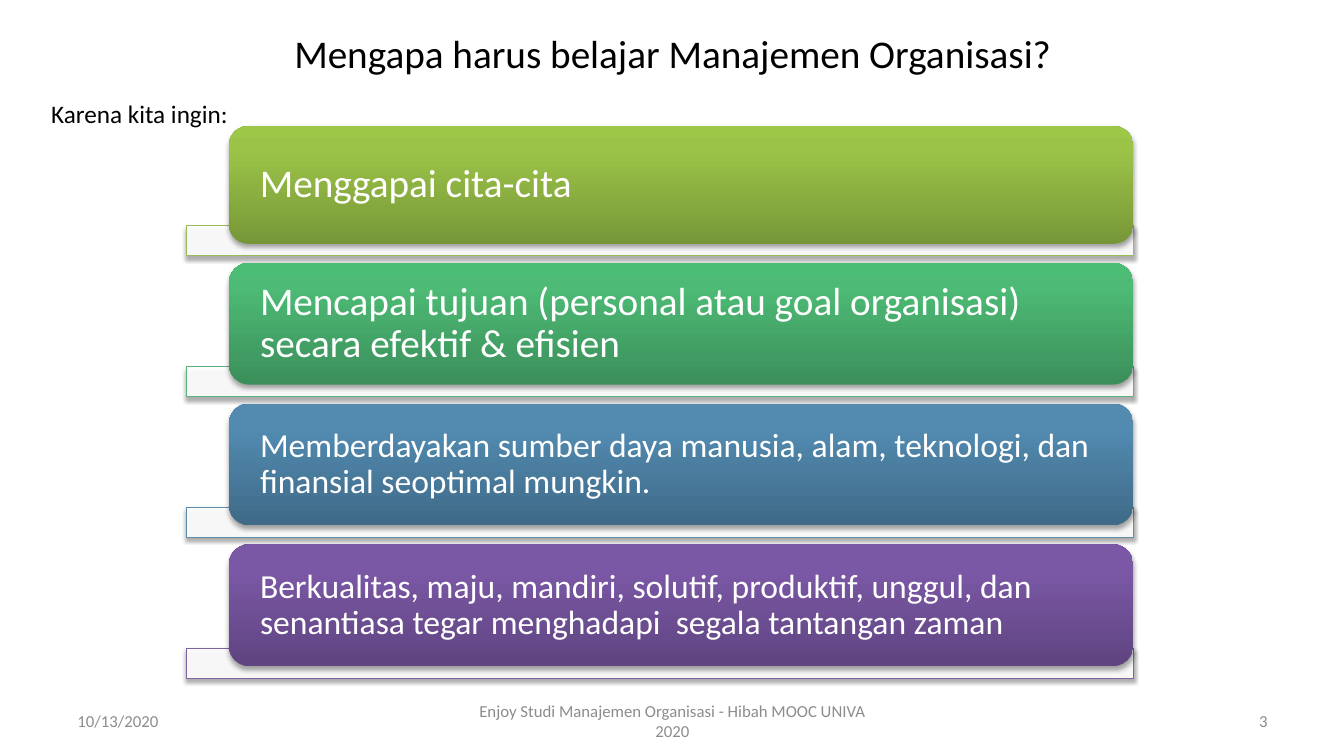
import copy

import pptx
import pptx.dml.color
import pptx.enum.shapes
import pptx.enum.text
import pptx.oxml
import pptx.oxml.ns
import pptx.util

Inches = pptx.util.Inches
Pt = pptx.util.Pt
SHAPE = pptx.enum.shapes.MSO_SHAPE
ALIGN = pptx.enum.text.PP_ALIGN
ANCHOR = pptx.enum.text.MSO_ANCHOR
qn = pptx.oxml.ns.qn

COLORS = {"text": "000000", "footer": "8C8C8C", "white": "FFFFFF"}

# Text, size, card height, bar outline, gradient from bottom to top
REASONS = [
    ("Menggapai cita-cita", 28, 1.17,
     "9BBB59", ("779737", "9BC348", "9DC746")),
    ("Mencapai tujuan (personal atau goal organisasi) secara efektif & efisien", 28, 1.21,
     "5CB37C", ("3B8F5A", "4DBA75", "4BBD75")),
    ("Memberdayakan sumber daya manusia, alam, teknologi, dan finansial seoptimal mungkin.",
     24, 1.21, "608CAB", ("3F6A88", "528AB0", "518BB3")),
    ("Berkualitas, maju, mandiri, solutif, produktif, unggul, dan senantiasa tegar "
     "menghadapi  segala tantangan zaman", 24, 1.21,
     "8064A2", ("5F4480", "7B58A6", "7C57A8")),
]
STOPS = (0, 0.8, 1)

FOOTERS = [
    ("10/13/2020", 0.67, 3.11, ALIGN.LEFT),
    ("Enjoy Studi Manajemen Organisasi - Hibah MOOC UNIVA 2020", 4.56, 4.22, ALIGN.CENTER),
    ("3", 9.56, 3.11, ALIGN.RIGHT),
]

SHADOW = (
    '<a:outerShdw xmlns:a="http://schemas.openxmlformats.org/drawingml/2006/main"'
    ' blurRad="%d" dist="%d" dir="5400000" rotWithShape="0">'
    '<a:srgbClr val="000000"><a:alpha val="35000"/></a:srgbClr></a:outerShdw>'
    % (Pt(3.1), Pt(1.8))
)


def rgb(value):
    return pptx.dml.color.RGBColor.from_string(value)


def write(sp, text, size, color, align=ALIGN.LEFT, **frame):
    tf = sp.text_frame
    for name, value in {"word_wrap": True, **frame}.items():
        setattr(tf, name, value)
    p = tf.paragraphs[0]
    p.alignment = align
    r = p.add_run()
    r.text = text
    for name, value in {"name": "Calibri", "size": Pt(size)}.items():
        setattr(r.font, name, value)
    r.font.color.rgb = rgb(color)
    return p


def add_text(slide, box, *args, **frame):
    sp = slide.shapes.add_textbox(*map(Inches, box))
    write(sp, *args, **frame)


def add_shadowed(slide, kind, box):
    sp = slide.shapes.add_shape(kind, *map(Inches, box))
    sp.shadow.inherit = False
    effects = sp._element.spPr.find(qn("a:effectLst"))
    effects.append(pptx.oxml.parse_xml(SHADOW))
    return sp


def add_title(slide, box):
    title = slide.shapes.title
    title.left, title.top, title.width, title.height = map(Inches, box)
    write(title, "Mengapa harus belajar Manajemen Organisasi?", 28, COLORS["text"],
          ALIGN.CENTER, vertical_anchor=ANCHOR.TOP)


def add_bar(slide, box, outline):
    sp = add_shadowed(slide, SHAPE.RECTANGLE, box)
    sp.fill.solid()
    sp.fill.fore_color.rgb = rgb(COLORS["white"])
    color = sp._element.spPr.find(qn("a:solidFill"))[0]
    color.append(color.makeelement(qn("a:alpha"), {"val": "90000"}))
    sp.line.color.rgb = rgb(outline)
    sp.line.width = Pt(0.75)


def add_card(slide, box, text, size, gradient):
    sp = add_shadowed(slide, SHAPE.ROUNDED_RECTANGLE, box)
    sp.line.fill.background()
    # Three-stop gradient running upwards
    sp.fill.gradient()
    sp.fill.gradient_angle = 90
    stops = sp._element.spPr.find(qn("a:gradFill")).find(qn("a:gsLst"))
    stops.append(copy.deepcopy(stops[0]))
    for stop, position, color in zip(sp.fill.gradient_stops, STOPS, gradient):
        stop.position = position
        stop.color.rgb = rgb(color)
    p = write(sp, text, size, COLORS["white"], vertical_anchor=ANCHOR.MIDDLE,
              margin_left=Inches(0.25), margin_right=Inches(0.25),
              margin_top=0, margin_bottom=0)
    p.line_spacing = 0.9


def add_reasons(slide, box):
    left, top, width, height = box
    bar_height, overlap, indent = 0.3, 0.18, 0.42
    first_bar = top + REASONS[0][2] - overlap
    pitch = (top + height - bar_height - first_bar) / (len(REASONS) - 1)
    for i, (text, size, card_height, outline, gradient) in enumerate(REASONS):
        bar_top = first_bar + i * pitch
        add_bar(slide, (left, bar_top, width, bar_height), outline)
        add_card(slide, (left + indent, bar_top + overlap - card_height,
                         width - indent, card_height), text, size, gradient)


def add_footers(slide, top, height):
    for text, left, width, align in FOOTERS:
        add_text(slide, (left, top, width, height), text, 12, COLORS["footer"], align,
                 vertical_anchor=ANCHOR.MIDDLE)


def main():
    prs = pptx.Presentation()
    prs.slide_width, prs.slide_height = Inches(13.33), Inches(7.5)
    slide = prs.slides.add_slide(prs.slide_layouts[5])
    add_footers(slide, 6.95, 0.4)
    add_title(slide, (2.6, 0.24, 8.14, 0.57))
    add_reasons(slide, (1.85, 1.25, 9.39, 5.48))
    add_text(slide, (0.41, 0.93, 2.07, 0.4), "Karena kita ingin:", 18, COLORS["text"])
    prs.save("out.pptx")


if __name__ == "__main__":
    main()
